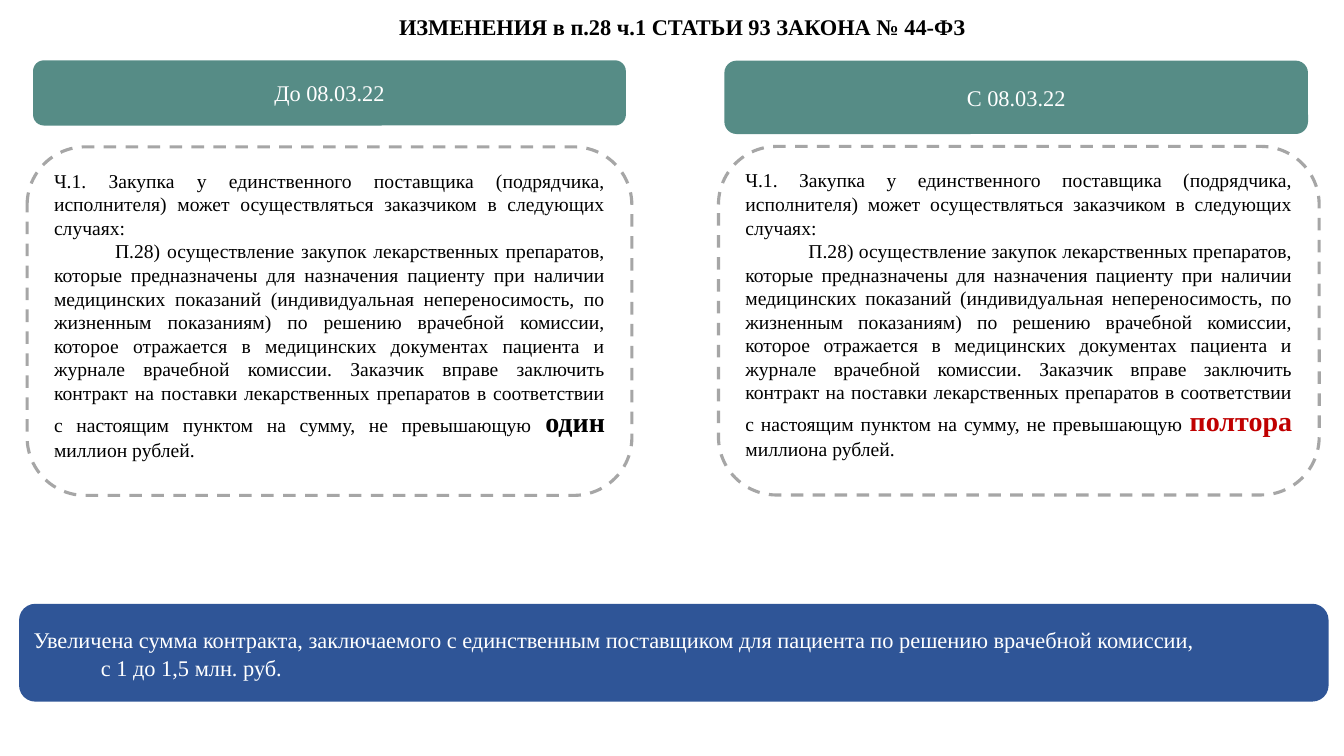
from dataclasses import dataclass

from pptx import Presentation
from pptx import util as u
from pptx.dml.color import RGBColor
from pptx.enum import dml, shapes, text


@dataclass(frozen=True)
class Theme:
    font: str = "Times New Roman"
    black: str = "000000"
    white: str = "FFFFFF"
    red: str = "C00000"
    teal: str = "568C86"
    blue: str = "2F5597"
    grey: str = "A6A6A6"
    body_size: int = 14
    heading_size: int = 16
    accent_size: int = 20
    border: float = 2.25


THEME = Theme()

TITLE = "ИЗМЕНЕНИЯ в п.28 ч.1 СТАТЬИ 93 ЗАКОНА № 44-ФЗ"
INTRO = ("Ч.1. Закупка у единственного поставщика (подрядчика, исполнителя) "
         "может осуществляться заказчиком в следующих случаях:")
CLAUSE = ("П.28) осуществление закупок лекарственных препаратов, которые "
          "предназначены для назначения пациенту при наличии медицинских "
          "показаний (индивидуальная непереносимость, по жизненным показаниям) "
          "по решению врачебной комиссии, которое отражается в медицинских "
          "документах пациента и журнале врачебной комиссии. Заказчик вправе "
          "заключить контракт на поставки лекарственных препаратов в "
          "соответствии с настоящим пунктом на сумму, не превышающую ")
SUMMARY = [
    "Увеличена сумма контракта, заключаемого с единственным поставщиком "
    "для пациента по решению врачебной комиссии,",
    "с 1 до 1,5 млн. руб.",
]
# Boxes are (left, top, width, height) in points.
TITLE_BOX = (25.9, 0.7, 923, 31.7)
SUMMARY_BOX = (13.6, 431.3, 935.4, 69.9)
VERSIONS = [
    {"heading": "До 08.03.22", "heading_box": (23.6, 43.1, 423.5, 46.6),
     "body_box": (19.4, 104.9, 432, 249), "indent": 43.6,
     "amount": "один", "amount_color": THEME.black, "ending": " миллион рублей."},
    {"heading": "С 08.03.22", "heading_box": (517.4, 43.3, 416.9, 52.4),
     "body_box": (513.2, 104.6, 429.1, 249), "indent": 45,
     "amount": "полтора", "amount_color": THEME.red, "ending": " миллиона рублей."},
]
SUMMARY_INDENT = 48


def rgb(value):
    return RGBColor.from_string(value)


def style(span, size, color, bold=False):
    span.font.name = THEME.font
    span.font.size = u.Pt(size)
    span.font.color.rgb = rgb(color)
    span.font.bold = bold


def write(frame, paragraphs, align, indents=None, spacing=1.0):
    """Fill a frame with paragraphs, each a list of (text, size, color, bold)."""
    frame.word_wrap = True
    for number, spans in enumerate(paragraphs):
        para = frame.add_paragraph() if number else frame.paragraphs[0]
        para.alignment = align
        para.line_spacing = spacing
        para.space_before = para.space_after = u.Pt(0)
        if indents:
            properties = para._p.get_or_add_pPr()
            properties.set("marL", "0")
            properties.set("indent", str(int(u.Pt(indents[number]))))
        for words, *look in spans:
            span = para.add_run()
            span.text = words
            style(span, *look)


def add_rounded(page, box, fill=None):
    """Add a filled panel, or a dashed outline when no fill is given."""
    panel = page.shapes.add_shape(
        shapes.MSO_SHAPE.ROUNDED_RECTANGLE, *map(u.Pt, box))
    panel.shadow.inherit = False
    if fill:
        panel.fill.solid()
        panel.fill.fore_color.rgb = rgb(fill)
        panel.line.fill.background()
        panel.text_frame.vertical_anchor = text.MSO_ANCHOR.MIDDLE
    else:
        panel.fill.background()
        panel.line.color.rgb = rgb(THEME.grey)
        panel.line.width = u.Pt(THEME.border)
        panel.line.dash_style = dml.MSO_LINE.DASH
        panel.text_frame.vertical_anchor = text.MSO_ANCHOR.TOP
    return panel


def add_title(page):
    title = page.shapes.title
    title.left, title.top, title.width, title.height = map(u.Pt, TITLE_BOX)
    title.text_frame.auto_size = text.MSO_AUTO_SIZE.NONE
    title.text_frame.vertical_anchor = text.MSO_ANCHOR.BOTTOM
    write(title.text_frame, [[(TITLE, THEME.heading_size, THEME.black, True)]],
          text.PP_ALIGN.CENTER, spacing=0.9)


def add_version(page, version):
    body = add_rounded(page, version["body_box"])
    plain = (THEME.body_size, THEME.black)
    write(body.text_frame,
          [[(INTRO, *plain)],
           [(CLAUSE, *plain),
            (version["amount"], THEME.accent_size, version["amount_color"], True),
            (version["ending"], *plain)]],
          text.PP_ALIGN.JUSTIFY, indents=(0, version["indent"]))
    heading = add_rounded(page, version["heading_box"], THEME.teal)
    write(heading.text_frame,
          [[(version["heading"], THEME.heading_size, THEME.white)]],
          text.PP_ALIGN.CENTER)


def add_summary(page):
    panel = add_rounded(page, SUMMARY_BOX, THEME.blue)
    write(panel.text_frame,
          [[(line, THEME.heading_size, THEME.white)] for line in SUMMARY],
          text.PP_ALIGN.JUSTIFY, indents=(0, SUMMARY_INDENT), spacing=1.07)


def main():
    deck = Presentation()
    deck.slide_width, deck.slide_height = u.Pt(960), u.Pt(540)
    page = deck.slides.add_slide(deck.slide_layouts.get_by_name("Title Only"))
    add_title(page)
    for version in VERSIONS:
        add_version(page, version)
    add_summary(page)
    deck.save("out.pptx")


if __name__ == "__main__":
    main()
